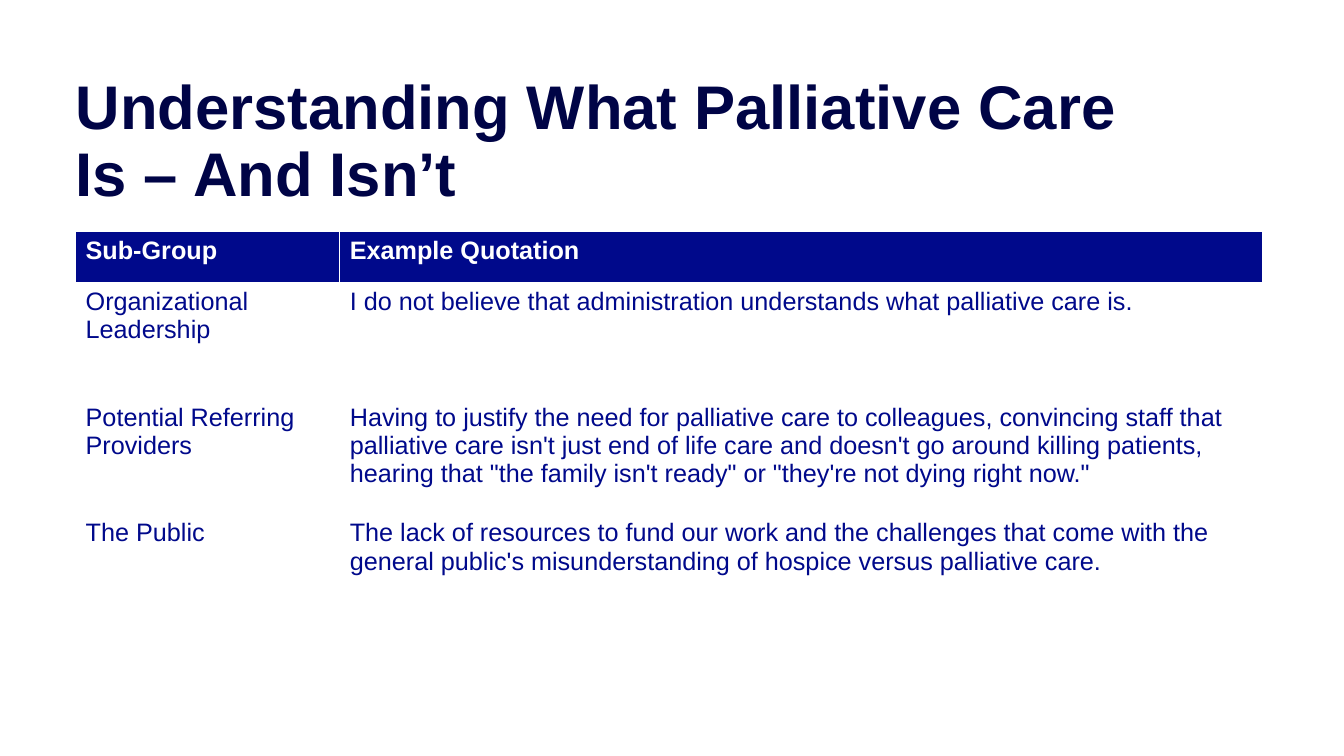
from dataclasses import dataclass

from pptx import Presentation
from pptx.dml.color import RGBColor
from pptx.enum.text import MSO_ANCHOR as Anchor
from pptx.slide import Slide
from pptx.text.text import TextFrame
from pptx.util import Inches, Pt


@dataclass(frozen=True)
class Theme:
    """Colours, font and type sizes of the slide."""
    font: str = "Arial"
    title: RGBColor = RGBColor(0x00, 0x04, 0x46)
    navy: RGBColor = RGBColor(0x00, 0x09, 0x8B)
    white: RGBColor = RGBColor(0xFF, 0xFF, 0xFF)
    title_size: int = 44
    body_size: int = 18


@dataclass(frozen=True)
class QuoteRow:
    """One table row: a sub-group and its quotation."""
    group: str
    quote: str
    height: float = 1.15
    header: bool = False


THEME = Theme()
LEFT = 0.75
COLUMNS = (2.62, 9.15)
ROWS = (
    QuoteRow("Sub-Group", "Example Quotation", 0.5, True),
    QuoteRow("Organizational Leadership",
             "I do not believe that administration understands what palliative care is."),
    QuoteRow("Potential Referring Providers",
             "Having to justify the need for palliative care to colleagues, convincing staff that "
             "palliative care isn't just end of life care and doesn't go around killing patients, "
             "hearing that \"the family isn't ready\" or \"they're not dying right now.\""),
    QuoteRow("The Public",
             "The lack of resources to fund our work and the challenges that come with the "
             "general public's misunderstanding of hospice versus palliative care."),
)


def write(tf: TextFrame, text: str, size: int, color: RGBColor, bold: bool) -> None:
    """Set the text of a frame and format its runs."""
    tf.text = text
    for p in tf.paragraphs:
        for r in p.runs:
            r.font.name = THEME.font
            r.font.size = Pt(size)
            r.font.bold = bold
            r.font.color.rgb = color


def add_title(s: Slide, text: str) -> None:
    """Add the slide title."""
    box = s.shapes.add_textbox(Inches(LEFT), Inches(0.75), Inches(11.57), Inches(1.33))
    tf = box.text_frame
    tf.word_wrap = True
    tf.vertical_anchor = Anchor.BOTTOM
    tf.margin_left = tf.margin_right = tf.margin_top = tf.margin_bottom = 0
    write(tf, text, THEME.title_size, THEME.title, True)
    tf.paragraphs[0].line_spacing = 0.9


def add_quotes(s: Slide, rows: tuple[QuoteRow, ...]) -> None:
    """Add the table of quotations."""
    height = sum(row.height for row in rows)
    table = s.shapes.add_table(len(rows), len(COLUMNS), Inches(LEFT), Inches(2.3),
                               Inches(sum(COLUMNS)), Inches(height)).table
    table.horz_banding = False
    for column, width in zip(table.columns, COLUMNS):
        column.width = Inches(width)
    for line, row in zip(table.rows, rows):
        line.height = Inches(row.height)
        for cell, text in zip(line.cells, (row.group, row.quote)):
            color = THEME.white if row.header else THEME.navy
            write(cell.text_frame, text, THEME.body_size, color, row.header)
            if row.header:
                cell.fill.solid()
                cell.fill.fore_color.rgb = THEME.navy
            else:
                cell.fill.background()


def main() -> None:
    """Build and save the slide."""
    prs = Presentation()
    prs.slide_width, prs.slide_height = Inches(13.33), Inches(7.5)
    s = prs.slides.add_slide(prs.slide_layouts[6])
    add_title(s, "Understanding What Palliative Care \vIs – And Isn’t")
    add_quotes(s, ROWS)
    prs.save("out.pptx")


if __name__ == "__main__":
    main()
